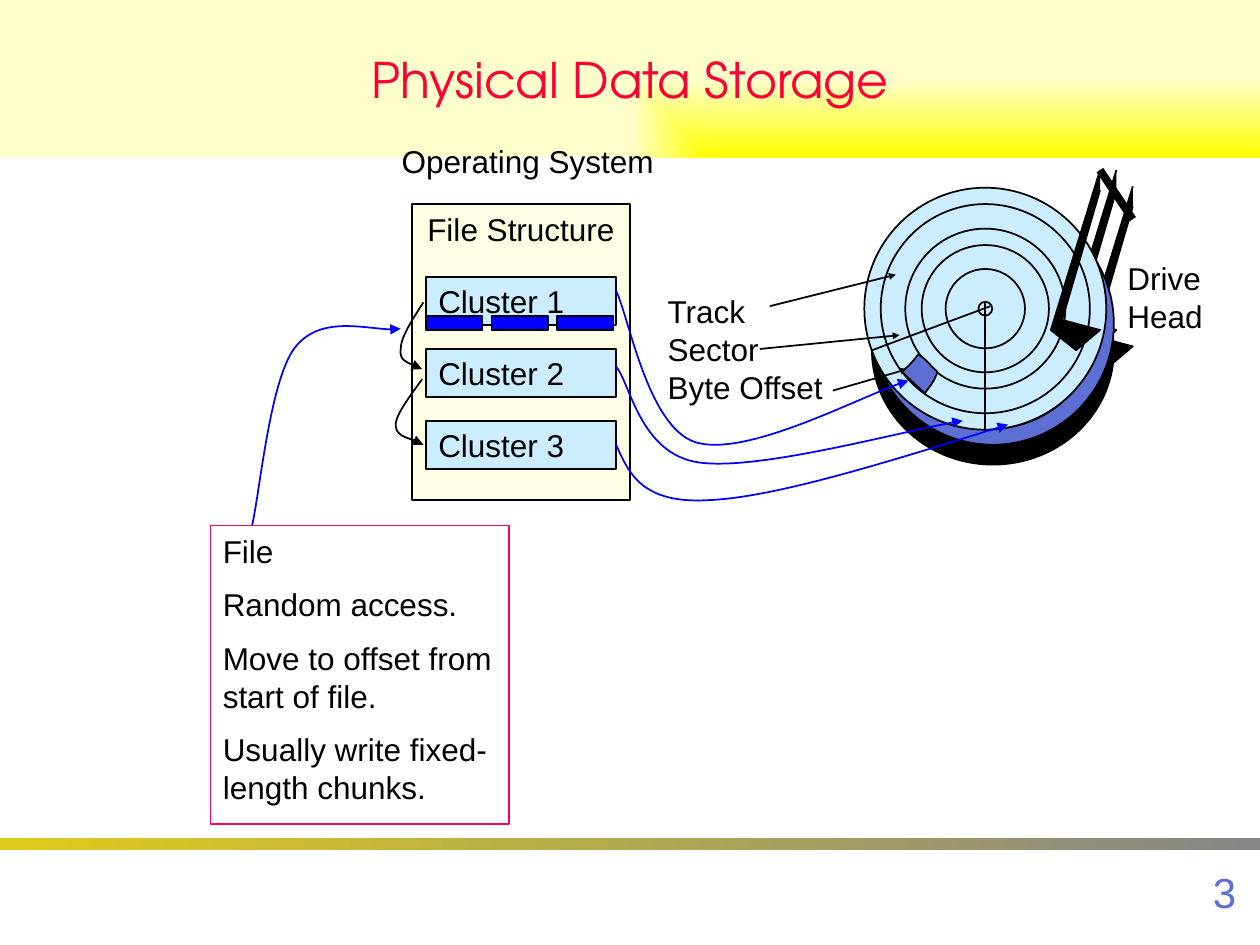
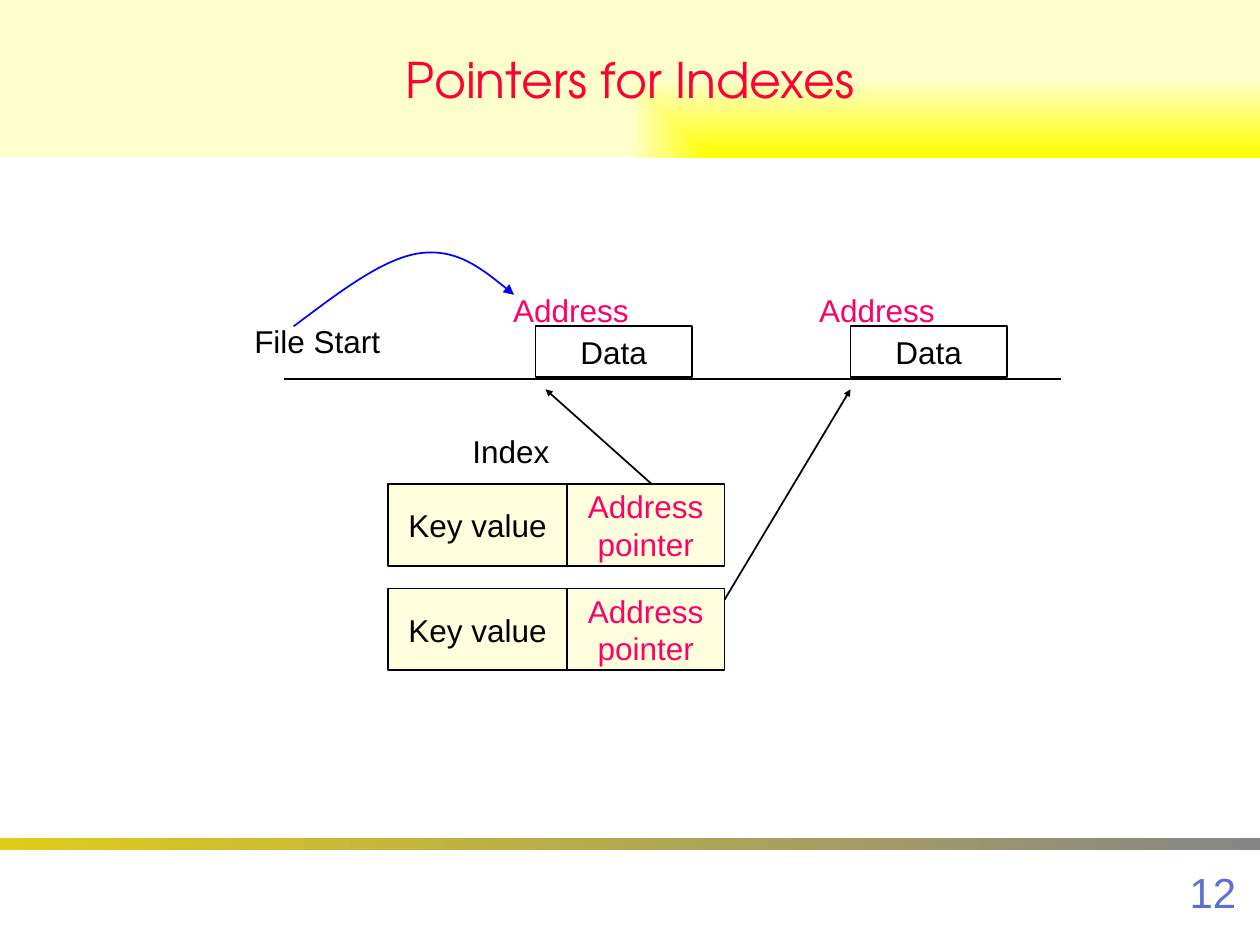
from dataclasses import dataclass

from pptx import Presentation
from pptx.dml.color import RGBColor
from pptx.enum.shapes import MSO_CONNECTOR, MSO_SHAPE
from pptx.enum.text import MSO_ANCHOR, PP_ALIGN
from pptx.oxml.ns import qn
from pptx.oxml.xmlchemy import OxmlElement
from pptx.util import Emu, Pt

SCALE = 9144  # EMU per px, 100 px to the inch
BLANK_LAYOUT = 6


@dataclass(frozen=True)
class Theme:
    black: str = "000000"
    blue: str = "0000FF"
    pink: str = "FF0066"
    title: str = "FF0033"
    violet: str = "5E6FD4"
    sky: str = "CCECFF"
    cream: str = "FFFFE5"
    index_fill: str = "FFFFDD"
    title_band: tuple = ("FFFF00", "FFFFCC")
    footer_band: tuple = ("E0CB1B", "868686")
    font: str = "Arial"
    title_font: str = "TeX Gyre Adventor"
    body_size: int = 18
    number_size: int = 24
    title_size: int = 28
    thin: float = 1
    thick: float = 4.5


THEME = Theme()


# ---------- formatting ----------

def px(length):
    return Emu(round(length * SCALE))


def apply_formats(target, formats):
    for name, value in formats.items():
        setattr(target, name, value)


def set_line(shape, color, width=THEME.thin, arrow_size=None):
    if color is None:
        shape.line.fill.background()
        return
    shape.line.color.rgb = RGBColor.from_string(color)
    shape.line.width = Pt(width)
    if arrow_size:
        tail = OxmlElement("a:tailEnd")
        for name, value in {"type": "triangle", "w": arrow_size, "len": arrow_size}.items():
            tail.set(name, value)
        shape._element.spPr.find(qn("a:ln")).append(tail)


def set_look(shape, fill, line, arrow_size=None):
    shape.shadow.inherit = False
    if fill is None:
        shape.fill.background()
    else:
        shape.fill.solid()
        shape.fill.fore_color.rgb = RGBColor.from_string(fill)
    set_line(shape, line, arrow_size=arrow_size)


def set_gradient(shape, colors, from_corner=False):
    shape.fill.gradient()
    for stop, color in zip(shape.fill.gradient_stops, colors):
        stop.color.rgb = RGBColor.from_string(color)
    gradient = shape._element.spPr.find(qn("a:gradFill"))
    linear = gradient.find(qn("a:lin"))
    linear.set("ang", "0")
    if from_corner:
        corner = OxmlElement("a:path")
        corner.set("path", "rect")
        target = OxmlElement("a:fillToRect")
        for side in ("l", "t"):
            target.set(side, "100000")
        corner.append(target)
        gradient.replace(linear, corner)


def write(shape, lines, color=THEME.black, size=THEME.body_size, font=THEME.font,
          align=PP_ALIGN.LEFT, anchor=MSO_ANCHOR.TOP, wrap=False, space_before=0):
    frame = shape.text_frame
    apply_formats(frame, {
        "word_wrap": wrap, "vertical_anchor": anchor,
        "margin_left": px(10), "margin_right": px(10),
        "margin_top": px(5), "margin_bottom": px(5),
    })
    for number, line in enumerate(lines):
        paragraph = frame.add_paragraph() if number else frame.paragraphs[0]
        apply_formats(paragraph, {"alignment": align, "space_before": Pt(space_before)})
        run = paragraph.add_run()
        run.text = line
        apply_formats(run.font, {"name": font, "size": Pt(size)})
        run.font.color.rgb = RGBColor.from_string(color)


# ---------- elements ----------

def add_preset(parent, kind, left, top, width, height, fill=None, line=THEME.black):
    shape = parent.shapes.add_shape(kind, px(left), px(top), px(width), px(height))
    set_look(shape, fill, line)
    return shape


def add_box(slide, left, top, width, height, lines=(), fill=None, line=THEME.black, **text):
    box = add_preset(slide, MSO_SHAPE.RECTANGLE, left, top, width, height, fill, line)
    if lines:
        write(box, lines, **text)
    return box


def add_label(slide, left, top, width, height, lines, **text):
    label = slide.shapes.add_textbox(px(left), px(top), px(width), px(height))
    write(label, lines, **text)


def add_straight(slide, start, end, width=THEME.thin, arrow_size=None):
    points = [px(value) for value in start + end]
    connector = slide.shapes.add_connector(MSO_CONNECTOR.STRAIGHT, *points)
    set_line(connector, THEME.black, width, arrow_size)
    connector._element.spPr.append(OxmlElement("a:effectLst"))


def add_pointer(slide, start, end):
    add_straight(slide, start, end, arrow_size="sm")


def add_outline(slide, points, fill=None, line=THEME.black, arrow_size=None,
                curved=False, close=False):
    builder = slide.shapes.build_freeform(*points[0], scale=SCALE)
    builder.add_line_segments(points[1:], close=close)
    shape = builder.convert_to_shape()
    if curved:
        bend_segments(shape)
    set_look(shape, fill, line, arrow_size)


def bend_segments(shape):
    """Turn every three straight segments into one cubic curve."""
    segments = list(shape._element.iter(qn("a:lnTo")))
    for first in range(0, len(segments), 3):
        curve = OxmlElement("a:cubicBezTo")
        segments[first].addprevious(curve)
        for segment in segments[first:first + 3]:
            curve.append(segment[0])
            segment.getparent().remove(segment)


def add_curved_arrow(slide, points, color=THEME.blue):
    add_outline(slide, points, line=color, arrow_size="med", curved=True)


def add_disc(slide, center_x, center_y, fill, ring_fill=None, flatten=1.0):
    disc = slide.shapes.add_group_shape()
    for diameter in (192, 166, 127, 101, 63, 11):
        height = diameter * flatten
        add_preset(disc, MSO_SHAPE.OVAL, center_x - diameter / 2, center_y - height / 2,
                   diameter, height, fill if diameter == 192 else ring_fill)


def add_drive_arm(slide, left, top):
    arm = ((39, 0), (0, 127), (20, 143), (39, 127), (9, 119), (39, 16))
    add_outline(slide, [(left + x, top + y) for x, y in arm], fill=THEME.black)


def add_base_slide(presentation, title, number):
    slide = presentation.slides.add_slide(presentation.slide_layouts[BLANK_LAYOUT])
    footer = add_box(slide, 0, 665, 1000, 10, line=None)
    set_gradient(footer, THEME.footer_band)
    band = add_box(slide, 0, 0, 1000, 125, [title], line=None, color=THEME.title,
                   size=THEME.title_size, font=THEME.title_font, wrap=True,
                   align=PP_ALIGN.CENTER, anchor=MSO_ANCHOR.MIDDLE)
    set_gradient(band, THEME.title_band, from_corner=True)
    add_label(slide, 783, 683, 208, 50, [str(number)], color=THEME.violet,
              size=THEME.number_size, align=PP_ALIGN.RIGHT, anchor=MSO_ANCHOR.MIDDLE)
    return slide


# ---------- slides ----------

def build_storage_slide(presentation):
    slide = add_base_slide(presentation, "Physical Data Storage", 3)

    # Drive: rear arms, stacked discs, front arm
    add_drive_arm(slide, 860, 148)
    add_drive_arm(slide, 847, 135)
    add_disc(slide, 788, 278, THEME.black, THEME.black, flatten=0.945)
    add_disc(slide, 788, 257, THEME.violet, THEME.violet)
    add_disc(slide, 782, 245, THEME.sky)
    add_straight(slide, (786, 243), (692, 278))
    add_straight(slide, (782, 239), (782, 343))
    add_drive_arm(slide, 834, 135)
    add_straight(slide, (873, 135), (899, 174), THEME.thick)

    # Drive labels and their pointers
    add_label(slide, 520, 227, 158, 100, ["Track", "Sector", "Byte Offset"], wrap=True)
    for start, end in (((611, 243), (711, 218)), ((603, 277), (714, 266)),
                       ((661, 310), (720, 293))):
        add_pointer(slide, start, end)
    byte_block = [(716, 295), (722, 301), (726, 305), (734, 312), (738, 307), (742, 302),
                  (744, 295), (738, 290), (738, 288), (729, 281), (726, 285), (723, 289),
                  (716, 295)]
    add_outline(slide, byte_block, fill=THEME.violet, curved=True, close=True)
    add_label(slide, 885, 201, 83, 70, ["Drive Head"], wrap=True)

    # File description
    add_box(slide, 167, 417, 237, 237,
            ["File", "Random access.", "Move to offset from start of file.",
             "Usually write fixed-length chunks."],
            line=THEME.pink, wrap=True, space_before=9)

    # File structure with its clusters
    add_box(slide, 327, 162, 173, 235, ["File Structure"], THEME.cream,
            align=PP_ALIGN.CENTER)
    for row in range(3):
        add_box(slide, 338, 220 + 57 * row, 151, 38, [f"Cluster {row + 1}"], THEME.sky,
                anchor=MSO_ANCHOR.MIDDLE)

    # Clusters to disc
    for curve in (
        [(489, 231), (499, 251), (514, 339), (552, 351), (591, 363), (686, 313), (721, 302)],
        [(489, 291), (500, 304), (508, 360), (554, 367), (600, 374), (720, 341), (764, 334)],
        [(489, 353), (499, 376), (510, 400), (562, 397), (614, 395), (707, 366), (800, 337)],
    ):
        add_curved_arrow(slide, curve)

    # Cluster to next cluster
    for curve in (
        [(336, 240), (327, 254), (318, 268), (318, 277), (317, 286), (326, 289), (335, 293)],
        [(335, 301), (331, 307), (314, 328), (314, 337), (314, 346), (332, 350), (336, 353)],
    ):
        add_curved_arrow(slide, curve, THEME.black)

    add_label(slide, 309, 108, 220, 40, ["Operating System"])

    # Fixed-length chunks, reached from the file
    for column in range(3):
        add_box(slide, 338 + 52 * column, 251, 45, 11, fill=THEME.blue)
    add_curved_arrow(slide, [(200, 417), (206, 393), (214, 302), (234, 276),
                             (254, 250), (301, 264), (318, 261)])


def build_pointer_slide(presentation):
    slide = add_base_slide(presentation, "Pointers for Indexes", 12)
    centered = {"align": PP_ALIGN.CENTER, "anchor": MSO_ANCHOR.MIDDLE}

    # Data records on the file line
    add_straight(slide, (225, 301), (842, 301))
    for data_left, address_left in ((425, 389), (675, 632)):
        add_box(slide, data_left, 259, 124, 40, ["Data"], **centered)
        add_label(slide, address_left, 225, 128, 42, ["Address"], color=THEME.pink, **centered)
    add_label(slide, 192, 251, 120, 40, ["File Start"])
    add_curved_arrow(slide, [(233, 259), (269, 232), (304, 205), (333, 201),
                             (362, 197), (385, 215), (408, 234)])

    # Index rows and their pointers
    add_label(slide, 365, 338, 81, 40, ["Index"])
    for top in (384, 467):
        add_box(slide, 308, top, 142, 65, ["Key value"], THEME.index_fill, **centered)
        add_box(slide, 450, top, 125, 65, ["Address", "pointer"], THEME.index_fill,
                color=THEME.pink, **centered)
    add_pointer(slide, (517, 384), (433, 309))
    add_pointer(slide, (575, 476), (675, 309))


def main():
    presentation = Presentation()
    apply_formats(presentation, {"slide_width": px(1000), "slide_height": px(750)})
    build_storage_slide(presentation)
    build_pointer_slide(presentation)
    presentation.save("out.pptx")


if __name__ == "__main__":
    main()
